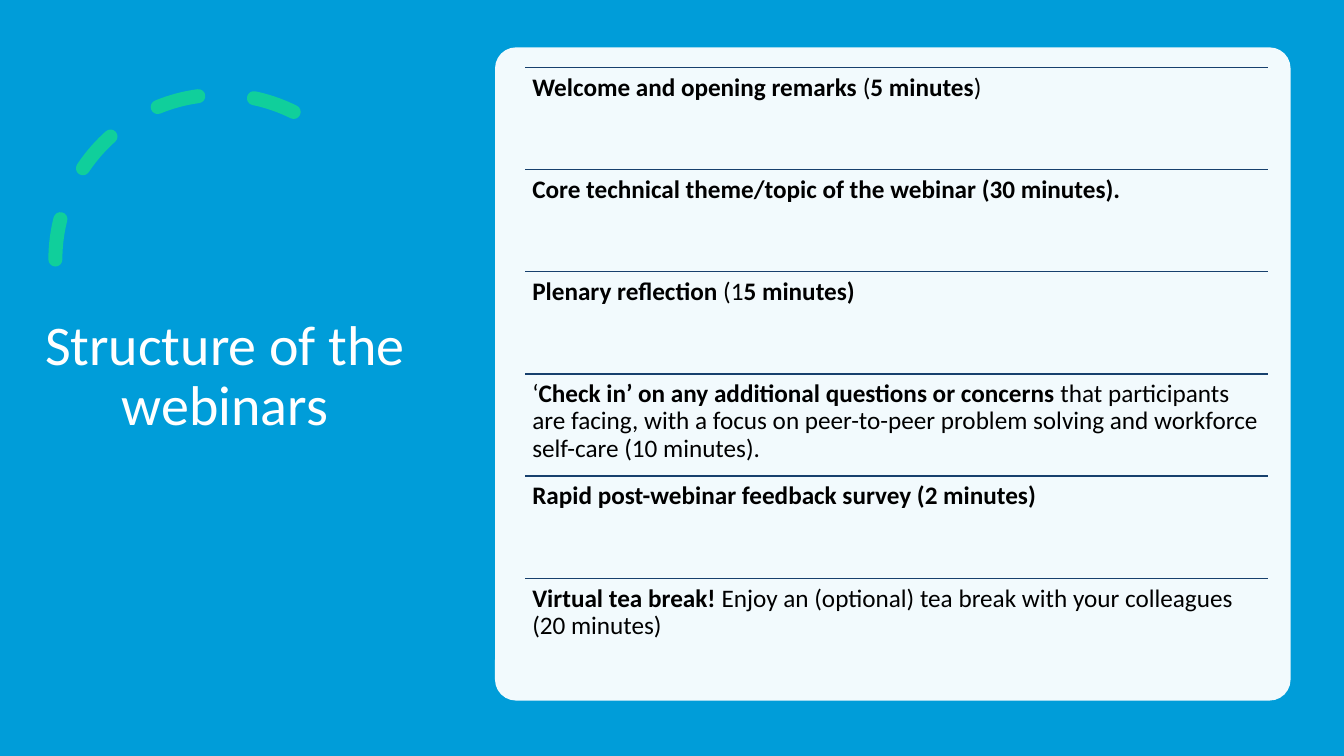
from lxml.etree import SubElement
from pptx import Presentation
from pptx.dml.color import RGBColor
from pptx.enum.dml import MSO_LINE
from pptx.enum.shapes import MSO_CONNECTOR, MSO_SHAPE
from pptx.enum.text import MSO_ANCHOR, PP_ALIGN
from pptx.oxml.ns import qn
from pptx.util import Inches, Pt

TITLE = "Structure of the webinars"
AGENDA = [
    [("Welcome and opening remarks", True), (" (", False), ("5 minutes", True), (")", False)],
    [("Core technical theme/topic of the webinar (30 minutes).", True)],
    [("Plenary reflection ", True), ("(1", False), ("5 minutes)", True)],
    [("‘", False), ("Check in’ on any additional questions or concerns ", True),
     ("that participants are facing, with a focus on peer-to-peer problem solving "
      "and workforce self-care (10 minutes).", False)],
    [("Rapid post-webinar feedback survey (2 minutes)", True)],
    [("Virtual tea break! ", True),
     ("Enjoy an (optional) tea break with your colleagues (20 minutes)", False)],
]

BLUE = RGBColor(0x00, 0x9D, 0xD9)
GREEN = RGBColor(0x10, 0xCF, 0x9B)
NAVY = RGBColor(0x17, 0x40, 0x6D)
WHITE = RGBColor(0xFF, 0xFF, 0xFF)
BLACK = RGBColor(0x00, 0x00, 0x00)
FONT = "Calibri"

WIDTH, HEIGHT = Inches(13.33), Inches(7.5)
LIST_LEFT, LIST_TOP, LIST_WIDTH = Inches(5.21), Inches(0.67), Inches(7.37)
ROW_HEIGHT = Inches(6.08) // len(AGENDA)


def set_margins(frame, side, end):
    frame.margin_left = frame.margin_right = Inches(side)
    frame.margin_top = frame.margin_bottom = Inches(end)
    frame.word_wrap = True


def style(span, size, color, bold=False):
    span.font.name = FONT
    span.font.size = Pt(size)
    span.font.color.rgb = color
    span.font.bold = bold


def add_panel(slide, kind, left, top, width, height, color):
    panel = slide.shapes.add_shape(kind, left, top, width, height)
    panel.shadow.inherit = False
    panel.fill.solid()
    panel.fill.fore_color.rgb = color
    panel.line.fill.background()
    return panel


def add_title(slide):
    title = slide.shapes.title
    title.left, title.top = Inches(0.32), Inches(0.7)
    title.width, title.height = Inches(3.82), Inches(6.09)
    frame = title.text_frame
    frame.text = TITLE
    frame.vertical_anchor = MSO_ANCHOR.MIDDLE
    set_margins(frame, 0.1, 0.05)
    para = frame.paragraphs[0]
    para.alignment = PP_ALIGN.CENTER
    para.line_spacing = 0.9
    style(para.runs[0], 40, WHITE)


def add_dashed_arc(slide):
    arc = slide.shapes.add_shape(
        MSO_SHAPE.ARC, Inches(0.55), Inches(0.94), Inches(3.27), Inches(3.27))
    arc.shadow.inherit = False
    arc.adjustments[0] = 146.129
    arc.adjustments[1] = 0
    arc.fill.background()
    arc.line.color.rgb = GREEN
    arc.line.width = Pt(10)
    arc.line.dash_style = MSO_LINE.DASH
    arc.line._ln.set("cap", "rnd")
    arc._element.spPr.find(qn("a:xfrm")).set("flipH", "1")


def add_card(slide):
    card = add_panel(slide, MSO_SHAPE.ROUNDED_RECTANGLE,
                     Inches(4.91), Inches(0.47), Inches(7.89), Inches(6.48), WHITE)
    card.adjustments[0] = 0.032
    color = card._element.spPr.find(qn("a:solidFill"))[0]
    SubElement(color, qn("a:alpha")).set("val", "95000")


def add_agenda_item(slide, top, pieces):
    rule = slide.shapes.add_connector(
        MSO_CONNECTOR.STRAIGHT, LIST_LEFT, top, LIST_LEFT + LIST_WIDTH, top)
    rule.line.color.rgb = NAVY
    rule.line.width = Pt(1)
    SubElement(rule._element.spPr, qn("a:effectLst"))

    box = slide.shapes.add_textbox(LIST_LEFT, top, LIST_WIDTH, ROW_HEIGHT)
    set_margins(box.text_frame, 0.07, 0.07)
    para = box.text_frame.paragraphs[0]
    para.line_spacing = 0.9
    for text, bold in pieces:
        span = para.add_run()
        span.text = text
        style(span, 18, BLACK, bold)


def main():
    deck = Presentation()
    deck.slide_width, deck.slide_height = WIDTH, HEIGHT
    slide = deck.slides.add_slide(deck.slide_layouts[5])
    backdrop = add_panel(slide, MSO_SHAPE.RECTANGLE, 0, 0, WIDTH, HEIGHT, BLUE)
    slide.shapes.title._element.addprevious(backdrop._element)
    add_title(slide)
    add_dashed_arc(slide)
    add_card(slide)
    for row, pieces in enumerate(AGENDA):
        add_agenda_item(slide, LIST_TOP + row * ROW_HEIGHT, pieces)
    deck.save("out.pptx")


if __name__ == "__main__":
    main()
